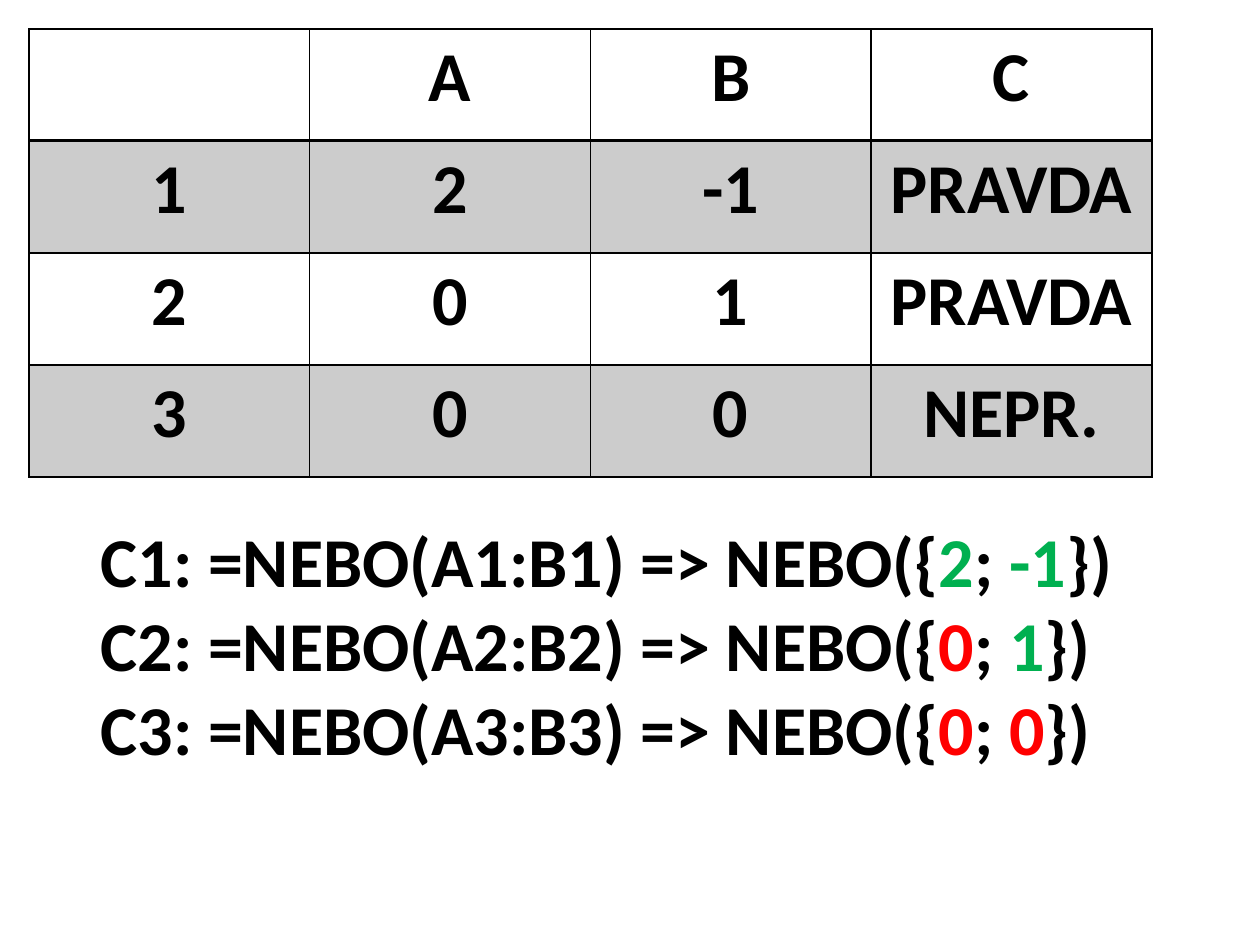
from dataclasses import dataclass

import lxml.etree
import pptx
import pptx.dml.color
import pptx.enum.text
import pptx.oxml.ns
import pptx.util

Cm = pptx.util.Cm
qn = pptx.oxml.ns.qn

COLORS = {"ink": "000000", "true": "00B050", "false": "FF0000"}
FONT_NAME = "Calibri"
FONT_SIZE = 40
BAND_ALPHA = 20
COLUMN_WIDTH = 5.66
ROW_HEIGHT = 2.26


@dataclass
class Example:
    """One sheet row: the two inputs of NEBO and its result."""
    a: int
    b: int
    result: str


EXAMPLES = [
    Example(2, -1, "PRAVDA"),
    Example(0, 1, "PRAVDA"),
    Example(0, 0, "NEPR."),
]


def add_run(paragraph, text: str, color: str = "ink") -> None:
    run = paragraph.add_run()
    run.text = text
    run.font.name = FONT_NAME
    run.font.size = pptx.util.Pt(FONT_SIZE)
    run.font.bold = True
    run.font.color.rgb = pptx.dml.color.RGBColor.from_string(COLORS[color])


def shade(cell) -> None:
    """Fill a cell with translucent ink."""
    cell.fill.solid()
    cell.fill.fore_color.rgb = pptx.dml.color.RGBColor.from_string(COLORS["ink"])
    tint = cell._tc.tcPr.find(".//" + qn("a:srgbClr"))
    lxml.etree.SubElement(tint, qn("a:alpha"), val=str(BAND_ALPHA * 1000))


def add_borders(cell, top: float, bottom: float) -> None:
    """Border lines must come before the fill in the cell properties."""
    properties = cell._tc.get_or_add_tcPr()
    widths = {"a:lnL": 1, "a:lnR": 1, "a:lnT": top, "a:lnB": bottom}
    for position, (side, width) in enumerate(widths.items()):
        border = lxml.etree.Element(qn(side), w=str(pptx.util.Pt(width)))
        solid = lxml.etree.SubElement(border, qn("a:solidFill"))
        lxml.etree.SubElement(solid, qn("a:srgbClr"), val=COLORS["ink"])
        properties.insert(position, border)


def add_sheet(slide, examples: list[Example]) -> None:
    rows = [["", "A", "B", "C"]]
    rows += [[str(number), str(example.a), str(example.b), example.result]
             for number, example in enumerate(examples, 1)]
    sheet = slide.shapes.add_table(
        len(rows), len(rows[0]), Cm(0.58), Cm(0.58),
        Cm(COLUMN_WIDTH * len(rows[0])), Cm(ROW_HEIGHT * len(rows))).table
    sheet.horz_banding = False
    for r, values in enumerate(rows):
        for c, value in enumerate(values):
            cell = sheet.cell(r, c)
            if r % 2:
                shade(cell)
            else:
                cell.fill.background()
            add_borders(cell, top=2 if r == 1 else 1, bottom=2 if r == 0 else 1)
            paragraph = cell.text_frame.paragraphs[0]
            paragraph.alignment = pptx.enum.text.PP_ALIGN.CENTER
            if value:
                add_run(paragraph, value)


def add_formulas(slide, examples: list[Example]) -> None:
    formulas = slide.shapes.add_textbox(
        Cm(1.78), Cm(10.31), Cm(21.23), Cm(7.09)).text_frame
    formulas.word_wrap = True
    formulas.auto_size = pptx.enum.text.MSO_AUTO_SIZE.SHAPE_TO_FIT_TEXT
    for n, example in enumerate(examples, 1):
        line = formulas.paragraphs[0] if n == 1 else formulas.add_paragraph()
        add_run(line, f"C{n}: =NEBO(A{n}:B{n}) => NEBO({{")
        add_run(line, str(example.a), "true" if example.a else "false")
        add_run(line, "; ")
        add_run(line, str(example.b), "true" if example.b else "false")
        add_run(line, "})")


def main() -> None:
    deck = pptx.Presentation()
    deck.slide_width, deck.slide_height = Cm(25.4), Cm(19.05)
    slide = deck.slides.add_slide(deck.slide_layouts[6])
    # Sheet with inputs and results
    add_sheet(slide, EXAMPLES)
    # Formulas behind column C
    add_formulas(slide, EXAMPLES)
    deck.save("out.pptx")


if __name__ == "__main__":
    main()
